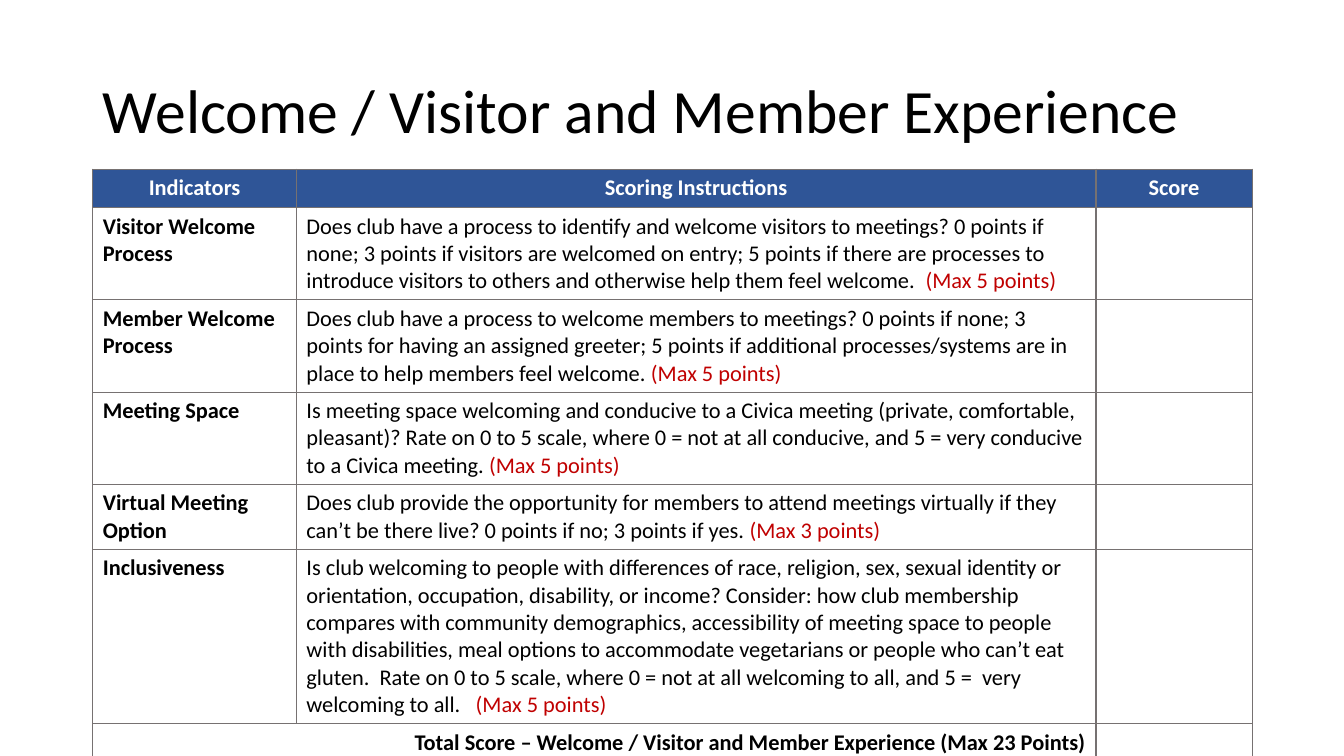
from dataclasses import dataclass

import pptx
import pptx.dml.color
import pptx.enum.text
import pptx.oxml
import pptx.oxml.ns
import pptx.util
from pptx.util import Inches

Align = pptx.enum.text.PP_ALIGN
FACE = "Calibri"
BLACK, WHITE, BLUE, RED, GREY = "000000", "FFFFFF", "2F5597", "C00000", "767171"
TITLE = "Welcome / Visitor and Member Experience"
HEADS = ["Indicators", "Scoring Instructions", "Score"]
WIDTHS = [2.02, 7.93, 1.55]
EDGE = 0.38  # height of the heading and total rows


@dataclass
class Item:
    name: str
    guide: str
    most: int
    height: float


ITEMS = [
    Item("Visitor Welcome Process",
         "Does club have a process to identify and welcome visitors to meetings? "
         "0 points if none; 3 points if visitors are welcomed on entry; 5 points if "
         "there are processes to introduce visitors to others and otherwise help "
         "them feel welcome.  ", 5, 0.91),
    Item("Member Welcome Process",
         "Does club have a process to welcome members to meetings? 0 points if none; "
         "3 points for having an assigned greeter; 5 points if additional "
         "processes/systems are in place to help members feel welcome. ", 5, 0.91),
    Item("Meeting Space",
         "Is meeting space welcoming and conducive to a Civica meeting (private, "
         "comfortable, pleasant)? Rate on 0 to 5 scale, where 0 = not at all "
         "conducive, and 5 = very conducive to a Civica meeting. ", 5, 0.91),
    Item("Virtual Meeting Option",
         "Does club provide the opportunity for members to attend meetings virtually "
         "if they can’t be there live? 0 points if no; 3 points if yes. ", 3, 0.64),
    Item("Inclusiveness",
         "Is club welcoming to people with differences of race, religion, sex, sexual "
         "identity or orientation, occupation, disability, or income? Consider: how "
         "club membership compares with community demographics, accessibility of "
         "meeting space to people with disabilities, meal options to accommodate "
         "vegetarians or people who can’t eat gluten.  Rate on 0 to 5 scale, where "
         "0 = not at all welcoming to all, and 5 =  very welcoming to all.   ",
         5, 1.73),
]


def paint(target, color: str) -> None:
    """Colour a font or a solid fill."""
    holder = target.color if hasattr(target, "color") else target.fore_color
    holder.rgb = pptx.dml.color.RGBColor.from_string(color)


def style(font, size: int, color: str, bold: bool = False) -> None:
    font.name, font.size, font.bold = FACE, pptx.util.Pt(size), bold
    paint(font, color)


def frame(cell) -> None:
    """Draw a thin border on all four sides of a cell."""
    props = cell._tc.get_or_add_tcPr()
    for side in "LRTB":
        props.append(pptx.oxml.parse_xml(
            f'<a:ln{side} {pptx.oxml.ns.nsdecls("a")} w="12700"><a:solidFill>'
            f'<a:srgbClr val="{GREY}"/></a:solidFill></a:ln{side}>'))


def write(cell, text: str, color: str = BLACK, bold: bool = True,
          align=Align.LEFT):
    para = cell.text_frame.paragraphs[0]
    para.alignment = align
    style(para.font, 16, color, bold)
    if text:
        para.add_run().text = text
    return para


def add_title(slide) -> None:
    title = slide.shapes.title
    title.left, title.top = Inches(0.92), Inches(0.4)
    title.width, title.height = Inches(11.5), Inches(1.45)
    body = title.text_frame
    body.text = TITLE
    body.auto_size = pptx.enum.text.MSO_AUTO_SIZE.NONE
    body.vertical_anchor = pptx.enum.text.MSO_ANCHOR.MIDDLE
    para = body.paragraphs[0]
    para.alignment, para.line_spacing = Align.LEFT, 0.9
    style(para.font, 44, BLACK)


def add_scores(slide) -> None:
    heights = [EDGE, *(item.height for item in ITEMS), EDGE]
    table = slide.shapes.add_table(
        len(heights), len(WIDTHS), Inches(0.92), Inches(1.68),
        Inches(sum(WIDTHS)), Inches(sum(heights))).table
    table.horz_banding = False
    for col, width in zip(table.columns, WIDTHS):
        col.width = Inches(width)
    for row, height in zip(table.rows, heights):
        row.height = Inches(height)
    for cell in table.iter_cells():
        frame(cell)
        cell.fill.background()

    # Heading row
    for col, head in enumerate(HEADS):
        cell = table.cell(0, col)
        cell.fill.solid()
        paint(cell.fill, BLUE)
        write(cell, head, WHITE, align=Align.CENTER)

    # Indicator rows
    for row, item in enumerate(ITEMS, 1):
        write(table.cell(row, 0), item.name)
        para = write(table.cell(row, 1), item.guide, bold=False)
        limit = para.add_run()
        limit.text = f"(Max {item.most} points)"
        paint(limit.font, RED)
        write(table.cell(row, 2), "")

    # Total row
    last = len(heights) - 1
    table.cell(last, 0).merge(table.cell(last, 1))
    most = sum(item.most for item in ITEMS)
    write(table.cell(last, 0), f"Total Score – {TITLE} (Max {most} Points)",
          align=Align.RIGHT)
    write(table.cell(last, 2), "")


def main() -> None:
    deck = pptx.Presentation()
    deck.slide_width, deck.slide_height = Inches(13.33), Inches(7.5)
    slide = deck.slides.add_slide(deck.slide_layouts[5])
    add_title(slide)
    add_scores(slide)
    deck.save("out.pptx")


if __name__ == "__main__":
    main()
